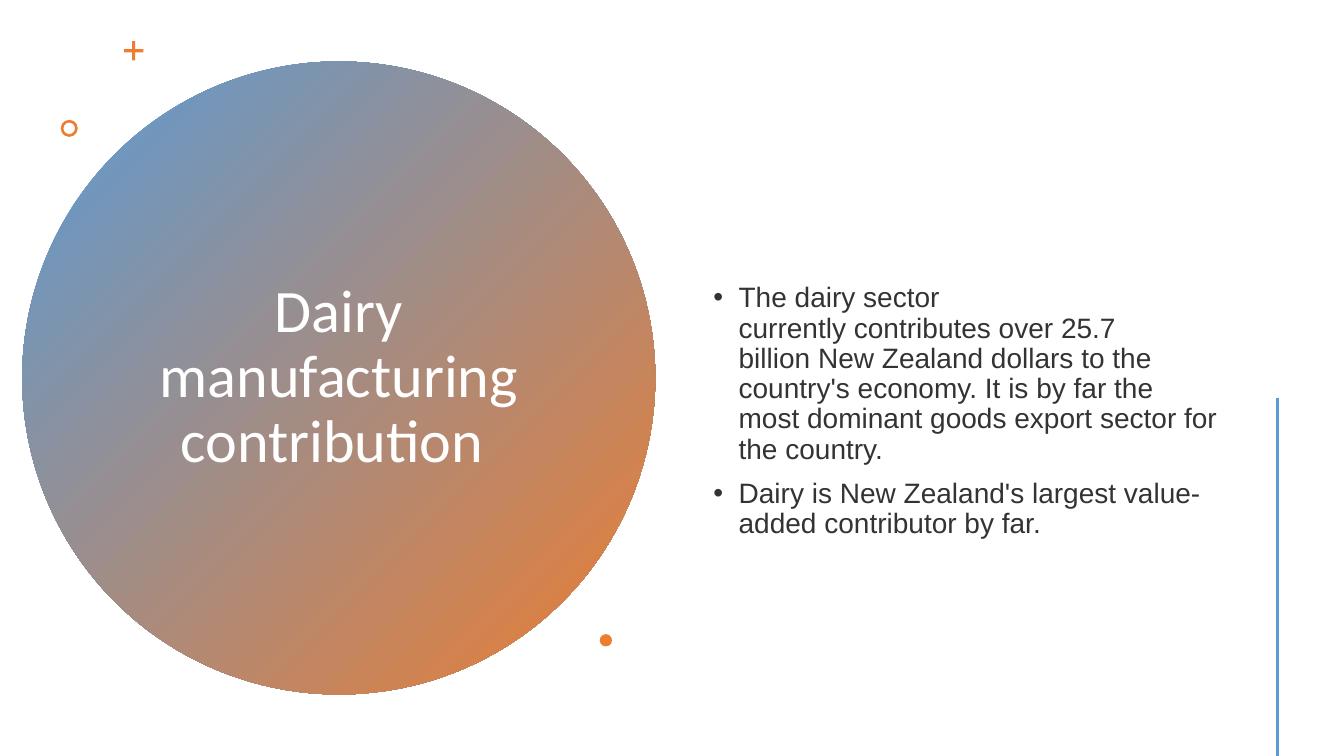
import dataclasses
import typing

import lxml.etree
import pptx
import pptx.dml.color
import pptx.enum.shapes
import pptx.enum.text
import pptx.oxml.ns
import pptx.util

Cm = pptx.util.Cm
Pt = pptx.util.Pt
Preset = pptx.enum.shapes.MSO_SHAPE

COLOURS = {"blue": "5B9BD5", "orange": "ED7D31", "white": "FFFFFF", "ink": "333333"}

TITLE = "Dairy manufacturing contribution "
# A tilde marks a space at which the line may not break.
NO_BREAK_SPACE = chr(160)
BULLETS = [
    "The~dairy~sector currently~contributes~over 25.7 billion~New Zealand~dollars to the "
    "country's~economy. It is by far the most dominant goods export sector for the country.",
    "Dairy is New Zealand's~largest value-added contributor by~far.",
]


@dataclasses.dataclass(frozen=True)
class Ornament:
    preset: Preset
    left: float
    top: float
    size: float
    adjustment: typing.Optional[float] = None


CIRCLE = Ornament(Preset.OVAL, 0.56, 1.55, 15.95)
ACCENTS = [
    Ornament(Preset.CROSS, 3.13, 1.04, 0.48, 0.42),
    Ornament(Preset.DONUT, 1.53, 3.02, 0.43, 0.16),
    Ornament(Preset.OVAL, 15.11, 15.98, 0.31),
]


@dataclasses.dataclass(frozen=True)
class TextStyle:
    left: float
    top: float
    width: float
    height: float
    font: dict[str, typing.Any]
    colour: str
    paragraph: dict[str, typing.Any]


TITLE_STYLE = TextStyle(
    3.47, 3.6, 10.13, 11.86, {"name": "Calibri", "size": Pt(43)}, "white",
    {"alignment": pptx.enum.text.PP_ALIGN.CENTER, "line_spacing": 0.9},
)
BODY_STYLE = TextStyle(
    17.72, 4.62, 13.26, 11.51, {"name": "Arial", "size": Pt(20)}, "ink",
    {"alignment": pptx.enum.text.PP_ALIGN.LEFT, "line_spacing": 0.9, "space_before": Pt(10)},
)


def rgb(name: str) -> pptx.dml.color.RGBColor:
    return pptx.dml.color.RGBColor.from_string(COLOURS[name])


def set_attributes(target: typing.Any, values: dict[str, typing.Any]) -> None:
    for name, value in values.items():
        setattr(target, name, value)


def add_ornament(page, ornament: Ornament):
    """Add a square preset shape in orange, without outline or shadow."""
    shape = page.shapes.add_shape(
        ornament.preset, Cm(ornament.left), Cm(ornament.top), Cm(ornament.size), Cm(ornament.size)
    )
    if ornament.adjustment is not None:
        shape.adjustments[0] = ornament.adjustment
    shape.shadow.inherit = False
    shape.fill.solid()
    shape.fill.fore_color.rgb = rgb("orange")
    shape.line.fill.background()
    return shape


def add_circle(page) -> None:
    """Add the gradient circle behind the placeholders."""
    circle = add_ornament(page, CIRCLE)
    circle.fill.gradient()
    circle.fill.gradient_angle = 315
    for stop, colour in zip(circle.fill.gradient_stops, ("blue", "orange")):
        stop.color.rgb = rgb(colour)
    page.shapes.element.insert(2, circle.element)


def fill_placeholder(box, lines: list[str], style: TextStyle) -> None:
    set_attributes(box, {
        "left": Cm(style.left), "top": Cm(style.top),
        "width": Cm(style.width), "height": Cm(style.height),
    })
    frame = box.text_frame
    frame.text = "\n".join(lines).replace("~", NO_BREAK_SPACE)
    set_attributes(frame, {
        "word_wrap": True,
        "auto_size": pptx.enum.text.MSO_AUTO_SIZE.NONE,
        "vertical_anchor": pptx.enum.text.MSO_ANCHOR.MIDDLE,
    })
    for para in frame.paragraphs:
        set_attributes(para, style.paragraph)
        for span in para.runs:
            set_attributes(span.font, style.font)
            span.font.color.rgb = rgb(style.colour)


def add_bullets(box) -> None:
    indent = Cm(0.635)
    for para in box.text_frame.paragraphs:
        properties = para._p.get_or_add_pPr()
        properties.set("marL", str(indent))
        properties.set("indent", str(-indent))
        bullet = lxml.etree.SubElement(properties, pptx.oxml.ns.qn("a:buChar"))
        bullet.set("char", "•")


def add_side_line(page) -> None:
    line = page.shapes.add_connector(
        pptx.enum.shapes.MSO_CONNECTOR.STRAIGHT, Cm(32.19), Cm(10.02), Cm(32.19), Cm(19.04)
    )
    line.line.color.rgb = rgb("blue")
    line.line.width = Pt(2.25)
    lxml.etree.SubElement(line.element.spPr, pptx.oxml.ns.qn("a:effectLst"))


def main() -> None:
    deck = pptx.Presentation()
    set_attributes(deck, {"slide_width": Cm(33.86), "slide_height": Cm(19.05)})
    page = deck.slides.add_slide(deck.slide_layouts[1])
    body = page.placeholders[1]
    fill_placeholder(page.shapes.title, [TITLE], TITLE_STYLE)
    fill_placeholder(body, BULLETS, BODY_STYLE)
    add_bullets(body)
    add_circle(page)
    for accent in ACCENTS:
        add_ornament(page, accent)
    add_side_line(page)
    deck.save("out.pptx")


if __name__ == "__main__":
    main()
